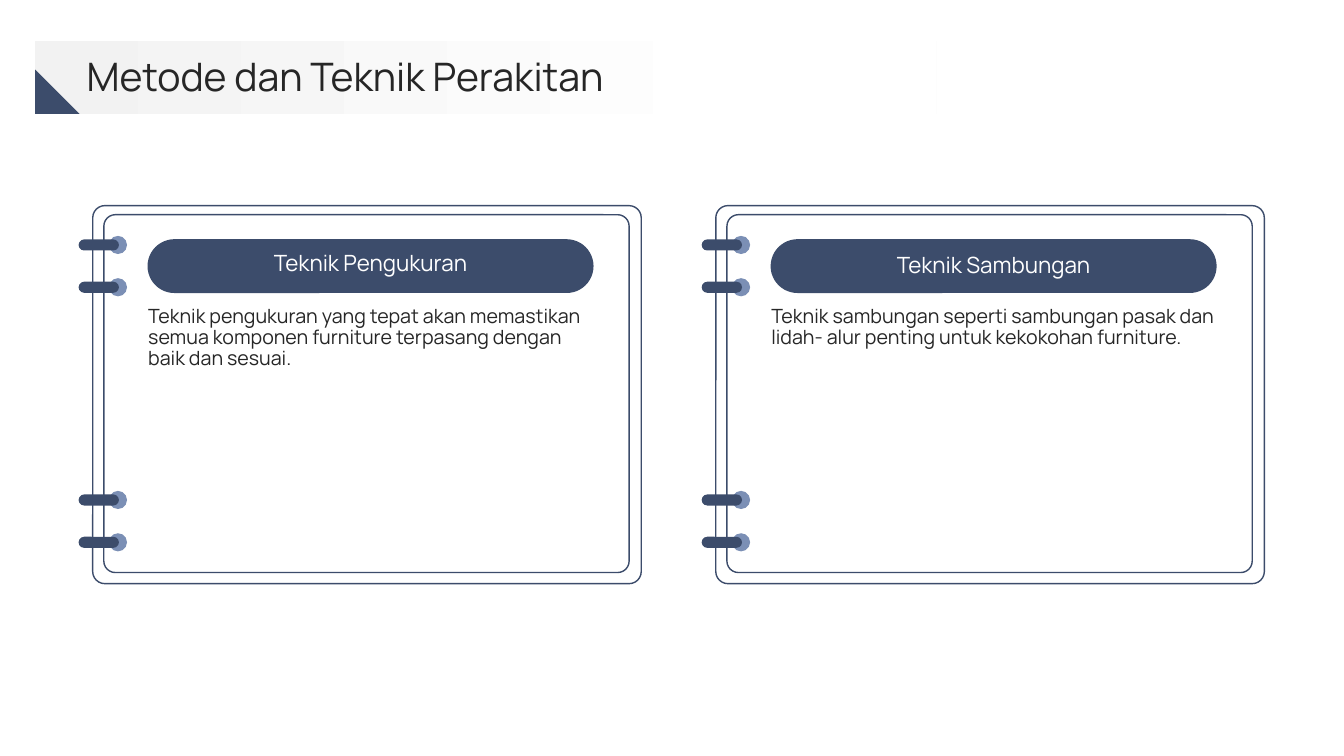
"""Build the slide on assembly methods and techniques."""
from pptx import Presentation
from pptx.dml.color import RGBColor
from pptx.enum import shapes, text
from pptx.util import Inches, Pt

TITLE = "Metode dan Teknik Perakitan"
CARDS = [
    ("Teknik Pengukuran", 2.4,
     "Teknik pengukuran yang tepat akan memastikan semua komponen "
     "furniture terpasang dengan baik dan sesuai."),
    ("Teknik Sambungan", 2.42,
     "Teknik sambungan seperti sambungan pasak dan lidah- alur penting "
     "untuk kekokohan furniture."),
]
NAVY, BLUE, WHITE, INK = "3C4C6B", "7B8FB5", "FFFFFF", "262626"
FADE = [(0, "F2F2F2"), (0.8, WHITE)]
LEFT, STEP = 0.78, 6.18
RINGS = [2.43, 2.85, 4.96, 5.38]
DOT, BAR = 0.18, 0.11
KIND = shapes.MSO_SHAPE
MID, TOP = text.MSO_ANCHOR.MIDDLE, text.MSO_ANCHOR.TOP


def tint(code):
    return RGBColor.from_string(code)


def place(item, box):
    for name, size in zip(("left", "top", "width", "height"), box):
        setattr(item, name, Inches(size))


def draw(slide, kind, box, fill, line=None, bend=None):
    shape = slide.shapes.add_shape(kind, *map(Inches, box))
    shape.shadow.inherit = False
    if bend is not None:
        shape.adjustments[0] = bend
    shape.fill.solid()
    shape.fill.fore_color.rgb = tint(fill)
    if line:
        shape.line.color.rgb = tint(line)
        shape.line.width = Pt(1)
    else:
        shape.line.fill.background()
    return shape


def write(item, words, size, color, anchor=MID, align=text.PP_ALIGN.LEFT):
    frame = item.text_frame
    style = dict(margin_left=0, margin_top=0, margin_right=0, margin_bottom=0,
                 word_wrap=True, auto_size=text.MSO_AUTO_SIZE.NONE,
                 vertical_anchor=anchor)
    for name, value in style.items():
        setattr(frame, name, value)
    para = frame.paragraphs[0]
    para.alignment, para.line_spacing = align, 0.9
    run = para.add_run()
    run.text = words
    for name, value in dict(name="Manrope", size=Pt(size), bold=False).items():
        setattr(run.font, name, value)
    run.font.color.rgb = tint(color)


def label(slide, box, *args):
    write(slide.shapes.add_textbox(*map(Inches, box)), *args)


def card(slide, x, head, top, body):
    draw(slide, KIND.ROUNDED_RECTANGLE, (x + 0.14, 2.04, 5.44, 3.75),
         WHITE, NAVY, 0.032)
    draw(slide, KIND.ROUNDED_RECTANGLE, (x + 0.25, 2.13, 5.21, 3.55),
         WHITE, NAVY, 0.032)
    for y in RINGS:
        draw(slide, KIND.OVAL, (x + 0.3, y - DOT / 2, DOT, DOT), BLUE)
        draw(slide, KIND.ROUNDED_RECTANGLE, (x, y - BAR / 2, 0.4, BAR),
             NAVY, bend=0.5)
    label(slide, (x + 0.69, 3.04, 4.41, 2.25), body, 14, INK, TOP)
    draw(slide, KIND.ROUNDED_RECTANGLE, (x + 0.69, 2.38, 4.41, 0.52),
         NAVY, NAVY, 0.5)
    label(slide, (x + 0.85, top, 4.09, 0.44), head, 16, WHITE, MID,
          text.PP_ALIGN.CENTER)


def header(slide):
    band = draw(slide, KIND.RECTANGLE, (0.35, 0.41, 8.94, 0.72), WHITE)
    band.fill.gradient()
    band.fill.gradient_angle = 0
    for stop, (spot, code) in zip(band.fill.gradient_stops, FADE):
        stop.position, stop.color.rgb = spot, tint(code)
    title = slide.shapes.title
    place(title, (0.86, 0.53, 11.67, 0.51))
    write(title, TITLE, 28, INK)
    band.element.addnext(title.element)
    draw(slide, KIND.RIGHT_TRIANGLE, (0.35, 0.69, 0.44, 0.44), NAVY)


def main():
    deck = Presentation()
    deck.slide_width, deck.slide_height = Inches(13.33), Inches(7.5)
    slide = deck.slides.add_slide(deck.slide_layouts[5])
    for i, (head, top, body) in enumerate(CARDS):
        card(slide, LEFT + i * STEP, head, top, body)
    header(slide)
    deck.save("out.pptx")


if __name__ == "__main__":
    main()
